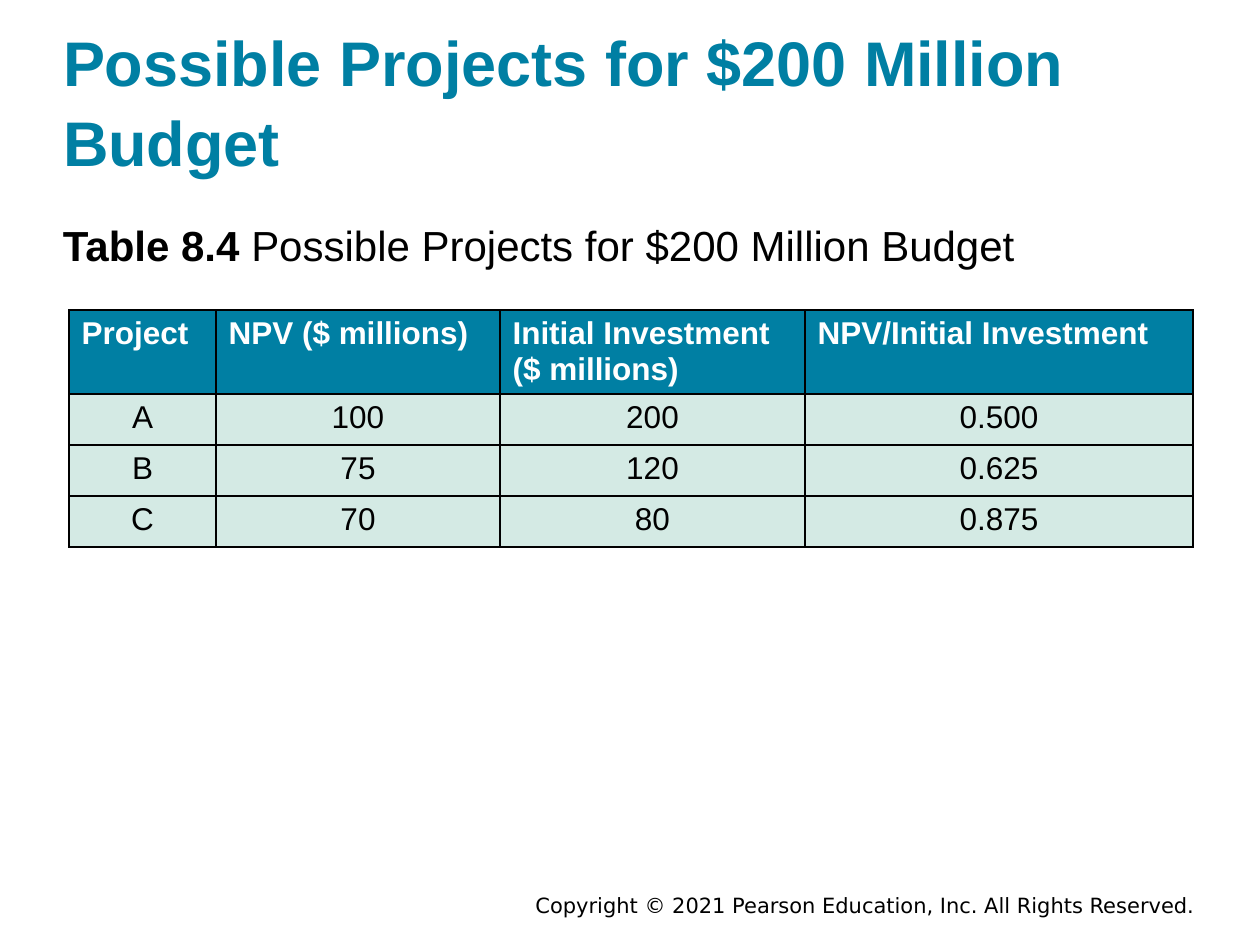
from lxml import etree
from pptx import Presentation
from pptx.dml.color import RGBColor
from pptx.enum.text import MSO_ANCHOR, MSO_AUTO_SIZE, PP_ALIGN
from pptx.oxml.ns import qn
from pptx.util import Pt

LEFT, CENTER, RIGHT = PP_ALIGN.LEFT, PP_ALIGN.CENTER, PP_ALIGN.RIGHT
TOP, BOTTOM = MSO_ANCHOR.TOP, MSO_ANCHOR.BOTTOM
NO_FIT = MSO_AUTO_SIZE.NONE
TEAL = RGBColor(0x00, 0x7F, 0xA3)
MINT = RGBColor(0xD4, 0xEA, 0xE4)
BLACK = RGBColor(0x00, 0x00, 0x00)
WHITE = RGBColor(0xFF, 0xFF, 0xFF)
PX_PER_INCH = 126


def px(n):
    """Turn pixels into EMU."""
    return round(n * 914400 / PX_PER_INCH)


class Deck:
    """Holds the style and the current slide."""

    font = "Arial"

    def __init__(self, width, height):
        """Start a presentation with one title-only slide."""
        self.prs = Presentation()
        self.prs.slide_width, self.prs.slide_height = px(width), px(height)
        self.s = self.prs.slides.add_slide(self.prs.slide_layouts[5])

    def add_runs(self, tf, runs, size, color, align=LEFT, font=None):
        """Fill the first paragraph with (text, bold) runs."""
        p = tf.paragraphs[0]
        p.alignment = align
        for text, bold in runs:
            r = p.add_run()
            r.text = text
            r.font.name = font or self.font
            r.font.size = Pt(size)
            r.font.bold = bold
            r.font.color.rgb = color

    def frame(self, sp, anchor, inset):
        """Set up wrapping, anchor and insets of a text frame."""
        tf = sp.text_frame
        tf.word_wrap = True
        tf.auto_size = NO_FIT
        tf.vertical_anchor = anchor
        tf.margin_left = tf.margin_right = px(inset)
        tf.margin_top = tf.margin_bottom = px(inset / 2)
        return tf

    def title(self, x, y, w, h, text):
        """Place and fill the title placeholder."""
        sp = self.s.shapes.title
        sp.left, sp.top, sp.width, sp.height = map(px, (x, y, w, h))
        tf = self.frame(sp, BOTTOM, 0)
        tf.paragraphs[0].line_spacing = 1.05
        self.add_runs(tf, [(text, True)], 36, TEAL)

    def text(self, x, y, w, h, runs, size, align=LEFT, font=None, inset=0):
        """Add a text box."""
        sp = self.s.shapes.add_textbox(*map(px, (x, y, w, h)))
        self.add_runs(self.frame(sp, TOP, inset), runs, size, BLACK, align, font)

    def border(self, cell):
        """Draw a thin line on each side of a cell."""
        tc_pr = cell._tc.get_or_add_tcPr()
        for i, side in enumerate(("lnL", "lnR", "lnT", "lnB")):
            ln = etree.Element(qn(f"a:{side}"), w=str(Pt(1)))
            fill = etree.SubElement(ln, qn("a:solidFill"))
            etree.SubElement(fill, qn("a:srgbClr"), val=str(BLACK))
            tc_pr.insert(i, ln)

    def table(self, x, y, widths, heights, rows):
        """Add a table with a header row."""
        sp = self.s.shapes.add_table(len(rows), len(widths), px(x), px(y),
                                     px(sum(widths)), px(sum(heights)))
        table = sp.table
        for column, width in zip(table.columns, widths):
            column.width = px(width)
        for i, (height, values) in enumerate(zip(heights, rows)):
            table.rows[i].height = px(height)
            head = i == 0
            for j, value in enumerate(values):
                cell = table.cell(i, j)
                cell.fill.solid()
                cell.fill.fore_color.rgb = TEAL if head else MINT
                self.border(cell)
                self.add_runs(cell.text_frame, [(value, head)], 18,
                              WHITE if head else BLACK, LEFT if head else CENTER)


def main():
    """Build the slide."""
    name = "Possible Projects for $200 Million Budget"
    deck = Deck(1260, 945)
    deck.text(494, 886, 714, 38,
              [("Copyright © 2021 Pearson Education, Inc. All Rights Reserved.", False)],
              12, RIGHT, "DejaVu Sans", 13)
    deck.title(63, 28, 1134, 151, name)
    deck.text(63, 220, 1134, 63, [("Table 8.4 ", True), (name, False)], 24)
    deck.table(69, 310, [147, 284, 305, 388], [84, 51, 51, 51], [
        ["Project", "NPV ($ millions)", "Initial Investment ($ millions)",
         "NPV/Initial Investment"],
        ["A", "100", "200", "0.500"],
        ["B", "75", "120", "0.625"],
        ["C", "70", "80", "0.875"],
    ])
    deck.prs.save("out.pptx")


if __name__ == "__main__":
    main()
